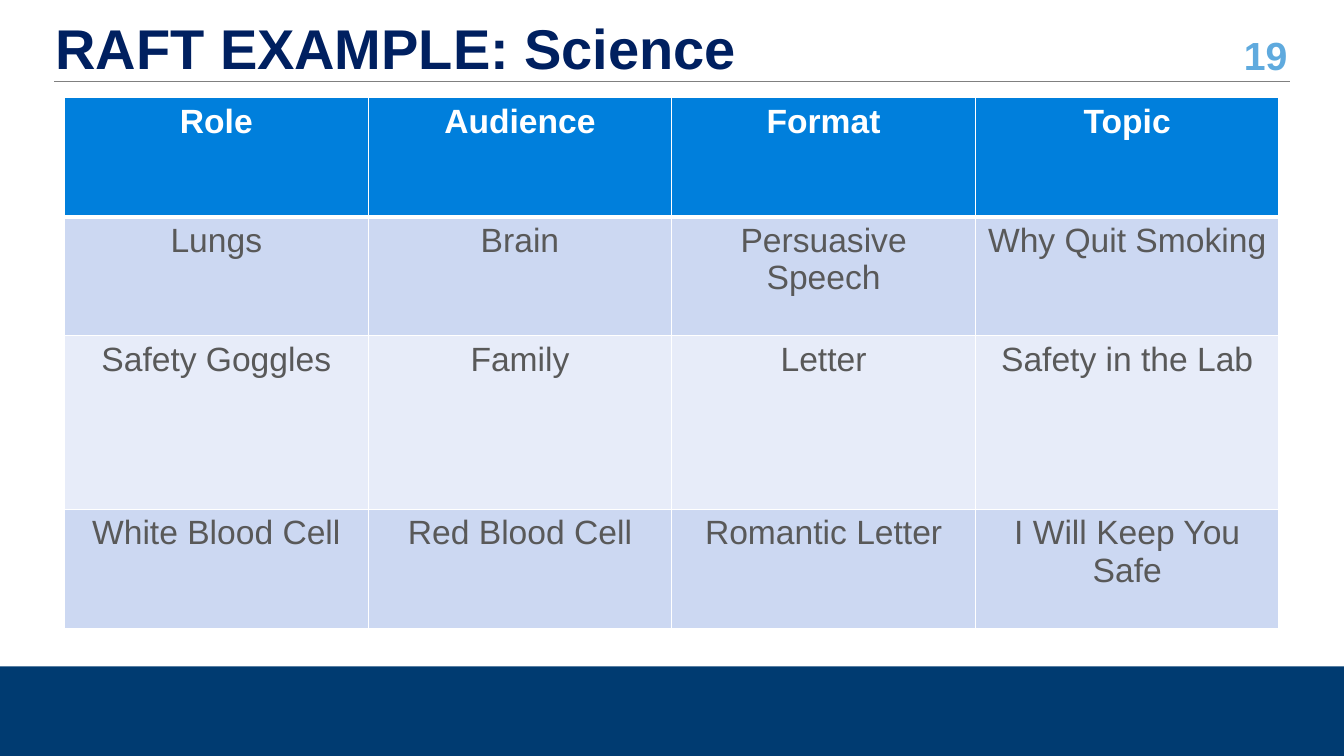
from lxml import etree
from pptx import Presentation
from pptx.dml.color import RGBColor
from pptx.enum import shapes, text
from pptx.oxml.ns import qn
from pptx.util import Pt

ROWS = [
    ["Role", "Audience", "Format", "Topic"],
    ["Lungs", "Brain", "Persuasive Speech", "Why Quit Smoking"],
    ["Safety Goggles", "Family", "Letter", "Safety in the Lab"],
    ["White Blood Cell", "Red Blood Cell", "Romantic Letter", "I Will Keep You Safe"],
]
ROW_HEIGHTS = [85, 85, 124, 85]
ROW_FILLS = ["007FDC", "CCD8F2", "E7ECF9", "CCD8F2"]
COLUMN_WIDTH = 216.9


def rgb(hex_colour):
    """Turn a hex string into a colour."""
    return RGBColor.from_string(hex_colour)


def set_all(target, values):
    """Set each attribute of a dict on the target."""
    for key, value in values.items():
        setattr(target, key, value)


def place(shape, left, top, width, height):
    """Move and size a shape in points."""
    set_all(shape, {"left": Pt(left), "top": Pt(top), "width": Pt(width), "height": Pt(height)})


def write(frame, words, size, colour, bold, align, **paragraph_format):
    """Write one formatted paragraph into a text frame."""
    frame.text = words
    paragraph = frame.paragraphs[0]
    set_all(paragraph, {"alignment": align, **paragraph_format})
    font = paragraph.runs[0].font
    set_all(font, {"name": "Arial", "size": Pt(size), "bold": bold})
    font.color.rgb = rgb(colour)


def add_band(slide):
    """Draw the footer band."""
    band = slide.shapes.add_shape(shapes.MSO_SHAPE.RECTANGLE, Pt(0), Pt(476), Pt(960), Pt(64))
    band.shadow.inherit = False
    band.fill.solid()
    band.fill.fore_color.rgb = rgb("003B71")
    band.line.fill.background()


def add_page_number(slide, number):
    """Write the page number at the top right."""
    frame = slide.shapes.add_textbox(Pt(869), Pt(23.8), Pt(57.6), Pt(30.2)).text_frame
    set_all(frame, {"word_wrap": True, "vertical_anchor": text.MSO_ANCHOR.MIDDLE})
    write(frame, number, 28, "5FAADE", True, text.PP_ALIGN.RIGHT)


def add_rule(slide):
    """Draw the thin rule under the title."""
    rule = slide.shapes.add_connector(
        shapes.MSO_CONNECTOR.STRAIGHT, Pt(38.9), Pt(57.8), Pt(921.6), Pt(57.8))
    rule.line.width = Pt(0.5)
    rule.line.color.rgb = rgb("808080")
    etree.SubElement(rule._element.spPr, qn("a:effectLst"))


def format_title(slide, words):
    """Place and fill the title placeholder."""
    title = slide.shapes.title
    place(title, 32.4, 21.6, 835.2, 30.2)
    set_all(title.text_frame, {"word_wrap": True, "vertical_anchor": text.MSO_ANCHOR.MIDDLE,
                               "auto_size": text.MSO_AUTO_SIZE.NONE})
    write(title.text_frame, words, 40, "002060", True, text.PP_ALIGN.LEFT, line_spacing=0.9)


def add_borders(cell, widths):
    """Give a cell white borders, with widths in points by side."""
    properties = cell._tc.get_or_add_tcPr()
    for index, (side, width) in enumerate(widths.items()):
        border = etree.Element(qn(f"a:ln{side}"), w=str(Pt(width)))
        fill = etree.SubElement(border, qn("a:solidFill"))
        etree.SubElement(fill, qn("a:srgbClr"), val="FFFFFF")
        properties.insert(index, border)


def add_raft_table(slide):
    """Build the table of roles, audiences, formats and topics."""
    columns = len(ROWS[0])
    table = slide.shapes.add_table(
        len(ROWS), columns, Pt(46.1), Pt(69.8),
        Pt(COLUMN_WIDTH * columns), Pt(sum(ROW_HEIGHTS))).table
    for column in table.columns:
        column.width = Pt(COLUMN_WIDTH)
    for r, (labels, height, fill) in enumerate(zip(ROWS, ROW_HEIGHTS, ROW_FILLS)):
        table.rows[r].height = Pt(height)
        header = r == 0
        for c, label in enumerate(labels):
            cell = table.cell(r, c)
            cell.fill.solid()
            cell.fill.fore_color.rgb = rgb(fill)
            write(cell.text_frame, label, 24, "FFFFFF" if header else "595959",
                  header, text.PP_ALIGN.CENTER)
            add_borders(cell, {"L": 1, "R": 1, "T": 3 if r == 1 else 1, "B": 3 if header else 1})


def main():
    """Build and save the slide."""
    deck = Presentation()
    set_all(deck, {"slide_width": Pt(960), "slide_height": Pt(540)})
    slide = deck.slides.add_slide(deck.slide_layouts[5])
    add_band(slide)
    add_page_number(slide, "19")
    add_rule(slide)
    format_title(slide, "RAFT EXAMPLE: Science")
    add_raft_table(slide)
    deck.save("out.pptx")


if __name__ == "__main__":
    main()
